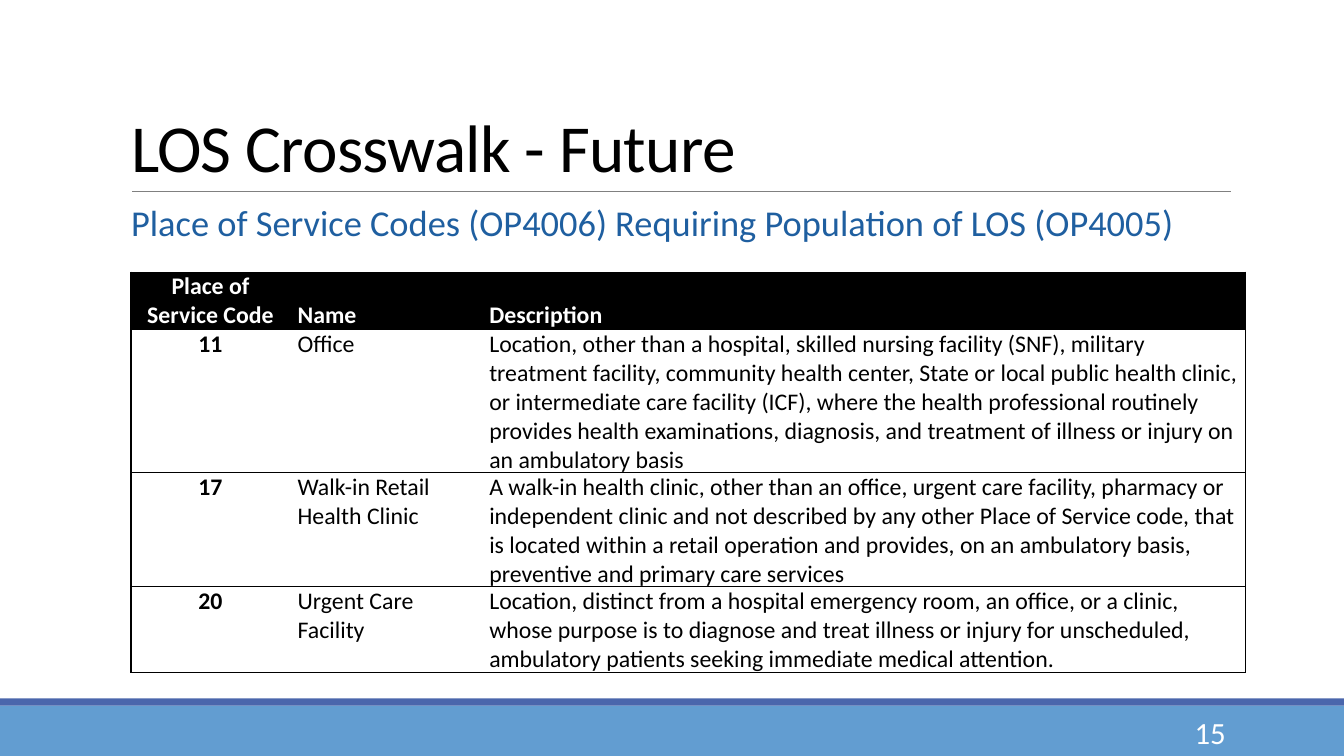
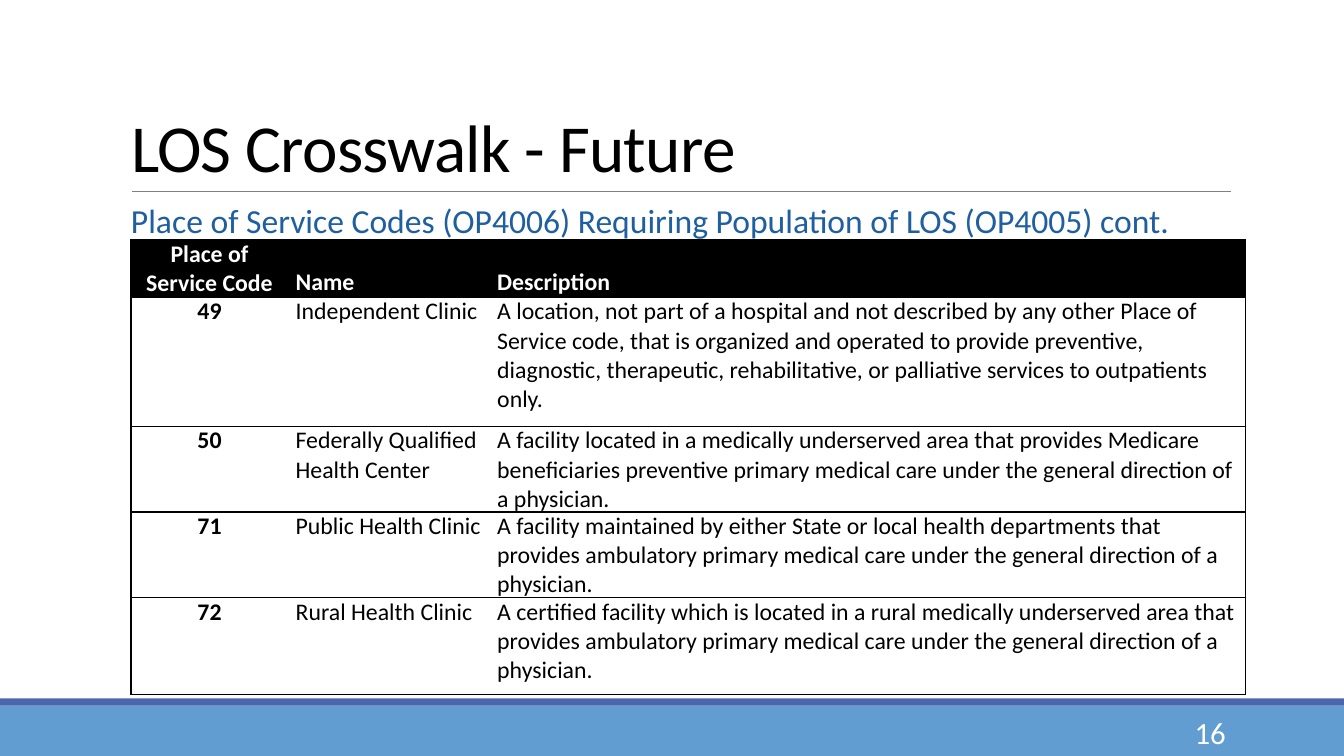
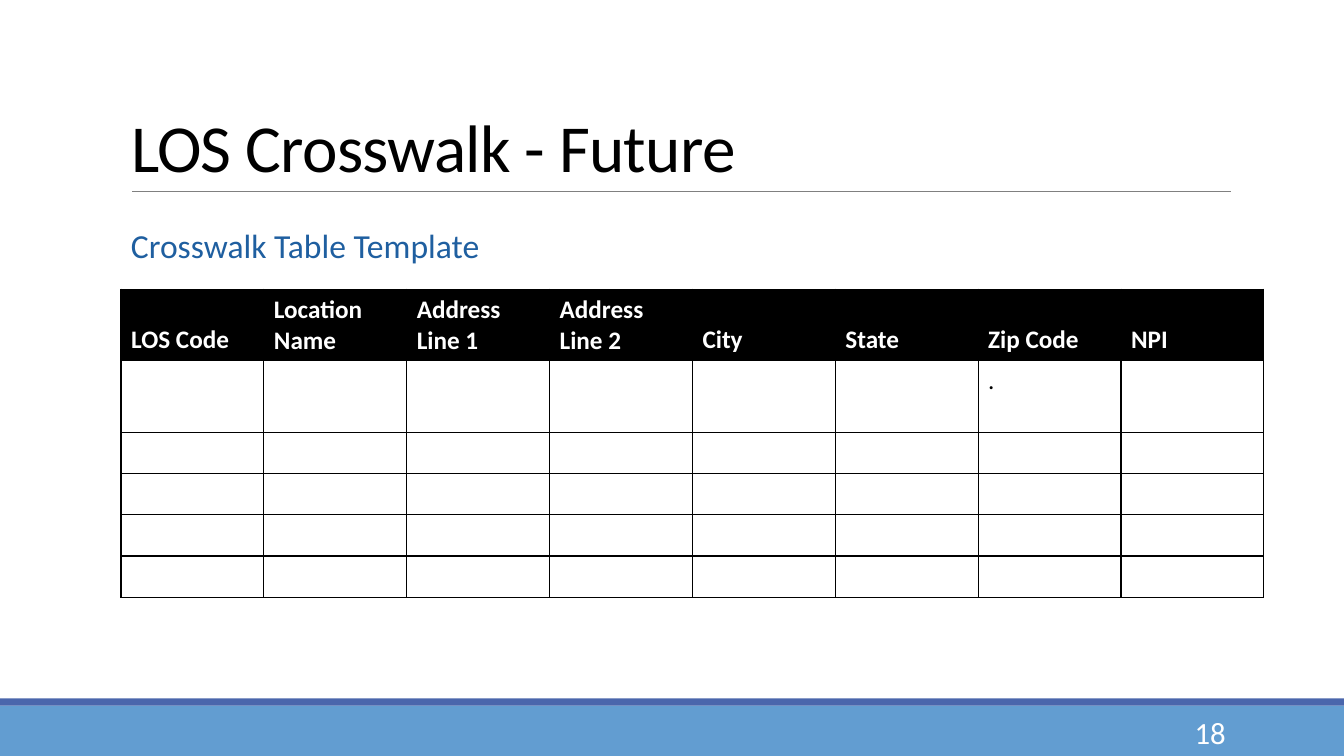
from lxml import etree
from pptx import Presentation
from pptx.dml.color import RGBColor
from pptx.enum.shapes import MSO_CONNECTOR, MSO_SHAPE
from pptx.enum.text import MSO_ANCHOR, MSO_AUTO_SIZE, PP_ALIGN
from pptx.oxml.ns import qn
from pptx.util import Cm, Pt

RECT = MSO_SHAPE.RECTANGLE
LINE = MSO_CONNECTOR.STRAIGHT
TOP, MIDDLE, BOTTOM = MSO_ANCHOR.TOP, MSO_ANCHOR.MIDDLE, MSO_ANCHOR.BOTTOM
LEFT, CENTER, RIGHT = PP_ALIGN.LEFT, PP_ALIGN.CENTER, PP_ALIGN.RIGHT
FIXED = MSO_AUTO_SIZE.NONE

BLACK = RGBColor(0x00, 0x00, 0x00)
WHITE = RGBColor(0xFF, 0xFF, 0xFF)
SKY = RGBColor(0x62, 0x9D, 0xD1)
INDIGO = RGBColor(0x4A, 0x66, 0xAC)
GRAY = RGBColor(0x80, 0x80, 0x80)
BLUE = RGBColor(0x1F, 0x5F, 0xA0)

FONT = "Calibri"
WIDE, HIGH = 33.87, 19.05
EDGE, SPAN = 3.05, 28.09

TITLE = "LOS Crosswalk - Future"
TOPIC = "Place of Service Codes (OP4006) Requiring Population of LOS (OP4005)"
HEAD = ("Place of Service Code", "Name", "Description")
CODES = [
    HEAD,
    ("11", "Office",
     "Location, other than a hospital, skilled nursing facility (SNF), military "
     "treatment facility, community health center, State or local public health "
     "clinic, or intermediate care facility (ICF), where the health professional "
     "routinely provides health examinations, diagnosis, and treatment of illness "
     "or injury on an ambulatory basis"),
    ("17", "Walk-in Retail Health Clinic",
     "A walk-in health clinic, other than an office, urgent care facility, pharmacy "
     "or independent clinic and not described by any other Place of Service code, "
     "that is located within a retail operation and provides, on an ambulatory "
     "basis, preventive and primary care services"),
    ("20", "Urgent Care Facility",
     "Location, distinct from a hospital emergency room, an office, or a clinic, "
     "whose purpose is to diagnose and treat illness or injury for unscheduled, "
     "ambulatory patients seeking immediate medical attention."),
]
MORE = [
    HEAD,
    ("49", "Independent Clinic",
     "A location, not part of a hospital and not described by any other Place of "
     "Service code, that is organized and operated to provide preventive, "
     "diagnostic, therapeutic, rehabilitative, or palliative services to "
     "outpatients only."),
    ("50", "Federally Qualified Health Center",
     "A facility located in a medically underserved area that provides Medicare "
     "beneficiaries preventive primary medical care under the general direction of "
     "a physician."),
    ("71", "Public Health Clinic",
     "A facility maintained by either State or local health departments that "
     "provides ambulatory primary medical care under the general direction of a "
     "physician."),
    ("72", "Rural Health Clinic",
     "A certified facility which is located in a rural medically underserved area "
     "that provides ambulatory primary medical care under the general direction of "
     "a physician."),
]
FIELDS = ("LOS Code", "Location Name", "Address Line 1", "Address Line 2",
          "City", "State", "Zip Code", "NPI")
FORM = [FIELDS, ("",) * 6 + (".", "")] + [("",) * len(FIELDS)] * 4


def place(shape, left, top, width, height):
    shape.left, shape.top = Cm(left), Cm(top)
    shape.width, shape.height = Cm(width), Cm(height)


def write(para, text, size, color, bold=False):
    run = para.add_run()
    run.text = text
    font = run.font
    font.name, font.size, font.bold = FONT, Pt(size), bold
    font.color.rgb = color
    return run


def add_band(slide, top, height, color):
    band = slide.shapes.add_shape(RECT, 0, Cm(top), Cm(WIDE), Cm(height))
    band.shadow.inherit = False
    band.fill.solid()
    band.fill.fore_color.rgb = color
    band.line.fill.background()


def add_rule(slide):
    rule = slide.shapes.add_connector(LINE, Cm(3.33), Cm(4.83), Cm(31.01), Cm(4.83))
    rule.line.color.rgb = GRAY
    rule.line.width = Pt(0.5)
    etree.SubElement(rule._element.spPr, qn("a:effectLst"))


def add_number(slide, number):
    box = slide.shapes.add_textbox(Cm(27.51), Cm(17.93), Cm(3.63), Cm(1.02))
    frame = box.text_frame
    frame.word_wrap = True
    frame.vertical_anchor = MIDDLE
    para = frame.paragraphs[0]
    para.alignment = RIGHT
    write(para, str(number), 22, WHITE)


def set_title(slide):
    title = slide.shapes.title
    place(title, EDGE, 0.79, SPAN, 4.04)
    frame = title.text_frame
    frame.auto_size = FIXED
    frame.vertical_anchor = BOTTOM
    para = frame.paragraphs[0]
    para.alignment = LEFT
    para.line_spacing = 0.85
    run = write(para, TITLE, 48, BLACK)
    run.font._element.set("spc", "-50")


def set_topic(slide, text, size, top, height, pitch):
    """Fill the body placeholder with the blue line under the title."""
    body = slide.placeholders[1]
    place(body, EDGE, top, SPAN, height)
    frame = body.text_frame
    frame.auto_size = FIXED
    frame.vertical_anchor = TOP
    frame.margin_left = frame.margin_right = 0
    para = frame.paragraphs[0]
    para.line_spacing = pitch
    para.space_before, para.space_after = Pt(12), Pt(2)
    props = para._p.get_or_add_pPr()
    props.set("marL", str(Cm(0.25)))
    props.set("indent", str(-Cm(0.25)))
    etree.SubElement(props, qn("a:buChar"), char=" ")
    write(para, text, size, BLUE)


def add_slide(deck, number):
    slide = deck.slides.add_slide(deck.slide_layouts[1])
    add_band(slide, 17.78, 1.27, SKY)
    add_band(slide, 17.6, 0.18, INDIGO)
    add_rule(slide)
    set_title(slide)
    add_number(slide, number)
    return slide


def set_edges(cell, drawn):
    """Draw the named sides (L, R, T, B) in black and clear the others."""
    props = cell._tc.get_or_add_tcPr()
    for side in "LRTB":
        line = etree.SubElement(props, qn("a:ln" + side), w=str(Pt(1)))
        if side in drawn:
            fill = etree.SubElement(line, qn("a:solidFill"))
            etree.SubElement(fill, qn("a:srgbClr"), val=str(BLACK))
        else:
            etree.SubElement(line, qn("a:noFill"))


def add_grid(slide, rows, left, top, widths, heights, size, form=False):
    """Add a table; a form has all its lines, a list none between columns."""
    shape = slide.shapes.add_table(len(rows), len(widths), Cm(left), Cm(top),
                                   Cm(sum(widths)), Cm(sum(heights)))
    table = shape.table
    table.horz_banding = False
    for col, width in zip(table.columns, widths):
        col.width = Cm(width)
    for row, height in zip(table.rows, heights):
        row.height = Cm(height)
    last = len(widths) - 1
    for r, row in enumerate(rows):
        for c, text in enumerate(row):
            cell = table.cell(r, c)
            sides = "TB"
            if form or c == 0:
                sides += "L"
            if form or c == last:
                sides += "R"
            set_edges(cell, sides)
            if r == 0:
                cell.fill.solid()
                cell.fill.fore_color.rgb = BLACK
                cell.vertical_anchor = BOTTOM
            else:
                cell.fill.background()
            code = c == 0 and not form
            if not form:
                cell.margin_left = cell.margin_right = Cm(0.19)
                cell.margin_top = cell.margin_bottom = 0
            para = cell.text_frame.paragraphs[0]
            para.alignment = CENTER if code else LEFT
            if text:
                write(para, text, size, BLACK if r else WHITE, r == 0 or code)


def main():
    deck = Presentation()
    deck.slide_width, deck.slide_height = Cm(WIDE), Cm(HIGH)

    slide = add_slide(deck, 15)
    set_topic(slide, TOPIC, 26, 5.21, 7.47, 0.7)
    add_grid(slide, CODES, 3.3, 6.86, [4.01, 4.83, 19.25],
             [0.84, 3.4, 1.7, 1.7], 17)

    slide = add_slide(deck, 16)
    set_topic(slide, TOPIC + " cont.", 24, 5.18, 7.47, 0.7)
    add_grid(slide, MORE, 3.3, 6.05, [3.96, 5.08, 19.05],
             [0.81, 3.25, 1.96, 1.63, 2.44], 17)

    slide = add_slide(deck, 18)
    set_topic(slide, "Crosswalk Table Template", 24, 5.66, 10.64, 0.9)
    add_grid(slide, FORM, EDGE, 7.29, [3.6] * len(FIELDS),
             [1.8] * 2 + [1.04] * 4, 18, form=True)

    deck.save("out.pptx")


if __name__ == "__main__":
    main()
